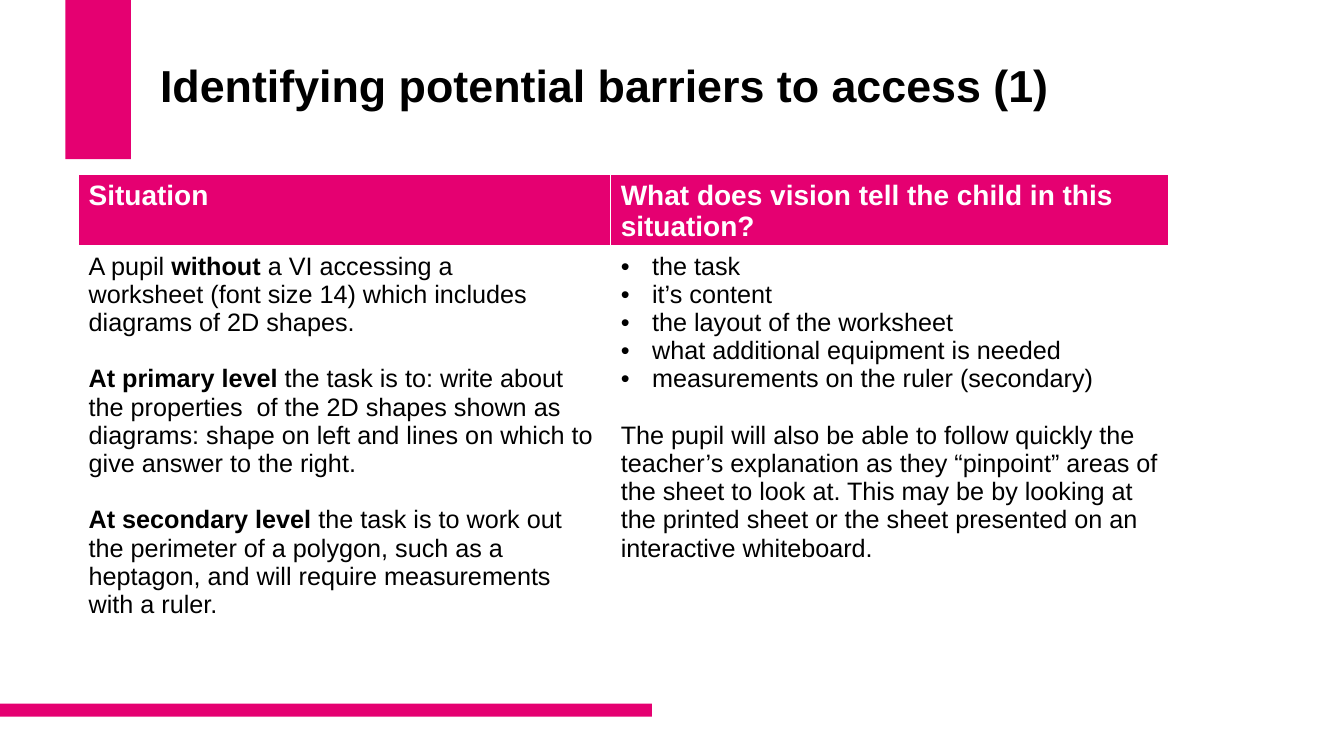
from dataclasses import dataclass

import pptx
import pptx.dml.color
import pptx.enum.shapes
import pptx.enum.text
import pptx.oxml
import pptx.oxml.ns
import pptx.util
from pptx.util import Cm, Pt

# Content: a paragraph is a list of (text, bold) runs.
TITLE = "Identifying potential barriers to access (1)"
HEADERS = ["Situation", "What does vision tell the child in this situation?"]
SITUATION = [
    [("A pupil ", False), ("without ", True), ("a VI accessing a", False)],
    [("worksheet (font size 14) which includes diagrams of 2D shapes.", False)],
    [("At primary level ", True),
     ("the task is to: write about the properties  of the 2D shapes shown as "
      "diagrams: shape on left and lines on which to give answer to the right.", False)],
    [("At secondary level", True),
     (" the task is to work out the perimeter of a polygon, such as a heptagon, "
      "and will require measurements with a ruler.", False)],
]
VISION_POINTS = [
    "the task",
    "it’s content",
    "the layout of the worksheet",
    "what additional equipment is needed",
    "measurements on the ruler (secondary)",
]
VISION_SUMMARY = (
    "The pupil will also be able to follow quickly the teacher’s explanation as they "
    "“pinpoint” areas of the sheet to look at. This may be by looking at the printed "
    "sheet or the sheet presented on an interactive whiteboard."
)


@dataclass(frozen=True)
class Theme:
    font: str = "Arial"
    accent: str = "E50071"
    paper: str = "FFFFFF"
    ink: str = "000000"
    title_size: int = 32
    header_size: int = 20
    body_size: int = 18
    paragraph_gap: float = 20.1


THEME = Theme()

# Left, top, width, height
ACCENT_BARS = [
    (Cm(1.65), Cm(0), Cm(1.65), Cm(4.01)),
    (Cm(0), Cm(17.73), Cm(16.43), Cm(0.33)),
]
TITLE_BOX = (Cm(3.78), Cm(1.02), Cm(24.38), Cm(3.68))
TABLE_LEFT, TABLE_TOP = Cm(1.98), Cm(4.4)
COLUMN_WIDTHS = [Cm(13.41), Cm(14.05)]
ROW_HEIGHTS = [Cm(1.78), Cm(11.1)]
BULLET_INDENT = Cm(0.79)


def colour(value):
    return pptx.dml.color.RGBColor.from_string(value)


def write_paragraph(paragraph, runs, size=THEME.body_size, color=THEME.ink,
                    bullet=False, space_before=0, line_spacing=None):
    """Fill a paragraph with (text, bold) runs in one format."""
    if bullet:
        properties = paragraph._p.get_or_add_pPr()
        properties.set("marL", str(BULLET_INDENT))
        properties.set("indent", str(-BULLET_INDENT))
        namespace = pptx.oxml.ns.nsdecls("a")
        properties.append(pptx.oxml.parse_xml(
            f'<a:buFont {namespace} typeface="{THEME.font}"/>'))
        properties.append(pptx.oxml.parse_xml(f'<a:buChar {namespace} char="•"/>'))
    paragraph.alignment = pptx.enum.text.PP_ALIGN.LEFT
    if space_before:
        paragraph.space_before = Pt(space_before)
    if line_spacing:
        paragraph.line_spacing = line_spacing
    for text, bold in runs:
        run = paragraph.add_run()
        run.text = text
        run.font.name = THEME.font
        run.font.size = Pt(size)
        run.font.bold = bold
        run.font.color.rgb = colour(color)


def set_borders(cell, bottom_width=1):
    properties = cell._tc.get_or_add_tcPr()
    widths = {"lnL": 1, "lnR": 1, "lnT": 1, "lnB": bottom_width}
    for position, (tag, width) in enumerate(widths.items()):
        properties.insert(position, pptx.oxml.parse_xml(
            f'<a:{tag} {pptx.oxml.ns.nsdecls("a")} w="{Pt(width)}"><a:solidFill>'
            f'<a:srgbClr val="{THEME.paper}"/></a:solidFill></a:{tag}>'))


def fill_cell(cell, paragraphs, fill, bottom_width=1):
    """Write a cell from (runs, format) pairs and set its fill and borders."""
    cell.fill.solid()
    cell.fill.fore_color.rgb = colour(fill)
    set_borders(cell, bottom_width)
    frame = cell.text_frame
    for index, (runs, style) in enumerate(paragraphs):
        paragraph = frame.add_paragraph() if index else frame.paragraphs[0]
        write_paragraph(paragraph, runs, **style)


def add_accent_bars(slide):
    for box in ACCENT_BARS:
        bar = slide.shapes.add_shape(pptx.enum.shapes.MSO_SHAPE.RECTANGLE, *box)
        bar.shadow.inherit = False
        bar.fill.solid()
        bar.fill.fore_color.rgb = colour(THEME.accent)
        bar.line.fill.background()


def add_title(slide):
    title = slide.shapes.title
    title.left, title.top, title.width, title.height = TITLE_BOX
    frame = title.text_frame
    frame.word_wrap = True
    frame.auto_size = pptx.enum.text.MSO_AUTO_SIZE.NONE
    frame.vertical_anchor = pptx.enum.text.MSO_ANCHOR.MIDDLE
    frame.margin_bottom = Cm(1.39)
    write_paragraph(frame.paragraphs[0], [(TITLE, True)],
                    size=THEME.title_size, line_spacing=0.9)


def add_barrier_table(slide):
    table = slide.shapes.add_table(
        len(ROW_HEIGHTS), len(COLUMN_WIDTHS), TABLE_LEFT, TABLE_TOP,
        sum(COLUMN_WIDTHS), sum(ROW_HEIGHTS)).table
    table.horz_banding = False
    for column, width in zip(table.columns, COLUMN_WIDTHS):
        column.width = width
    for row, height in zip(table.rows, ROW_HEIGHTS):
        row.height = height

    header_style = {"size": THEME.header_size, "color": THEME.paper}
    for index, header in enumerate(HEADERS):
        fill_cell(table.cell(0, index), [([(header, True)], header_style)],
                  THEME.accent, bottom_width=3)

    gap = {"space_before": THEME.paragraph_gap}
    situation = [(runs, gap if index >= 2 else {})
                 for index, runs in enumerate(SITUATION)]
    vision = [([(point, False)], {"bullet": True}) for point in VISION_POINTS]
    vision.append(([(VISION_SUMMARY, False)], gap))
    for index, paragraphs in enumerate([situation, vision]):
        fill_cell(table.cell(1, index), paragraphs, THEME.paper)


def main():
    presentation = pptx.Presentation()
    presentation.slide_width = Cm(33.87)
    presentation.slide_height = Cm(19.05)
    title_only = presentation.slide_layouts[5]
    slide = presentation.slides.add_slide(title_only)
    add_accent_bars(slide)
    add_title(slide)
    add_barrier_table(slide)
    presentation.save("out.pptx")


if __name__ == "__main__":
    main()
